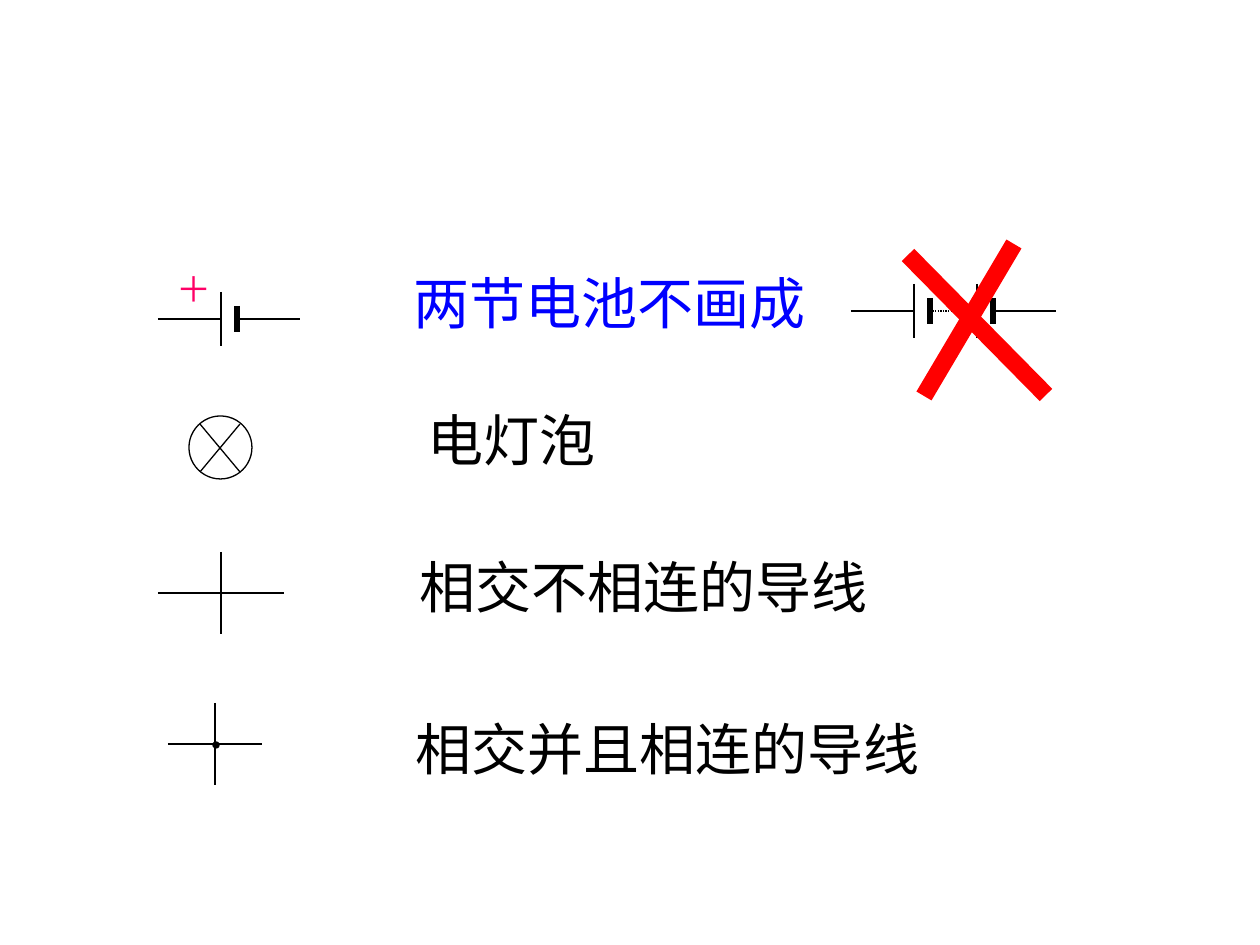
from dataclasses import dataclass

from pptx import Presentation
from pptx.dml.color import RGBColor
from pptx.enum.dml import MSO_LINE
from pptx.enum.shapes import MSO_CONNECTOR, MSO_SHAPE
from pptx.enum.text import MSO_AUTO_SIZE
from pptx.oxml.ns import qn
from pptx.oxml.xmlchemy import OxmlElement
from pptx.util import Emu, Pt

PX_PER_INCH = 126


@dataclass(frozen=True)
class Theme:
    font: str = "DejaVu Sans"
    ink: str = "000000"
    paper: str = "FFFFFF"
    note: str = "0000FF"
    plus: str = "FF0066"
    cross: str = "FF0000"
    label_size: int = 32
    plus_size: int = 20
    thin: float = 0.75
    plate: float = 3
    bold: float = 10


THEME = Theme()


def px(length):
    return Emu(round(length * 914400 / PX_PER_INCH))


def add_line(group, start, end, width=THEME.thin, color=THEME.ink, dash=None):
    line = group.shapes.add_connector(
        MSO_CONNECTOR.STRAIGHT, *map(px, (*start, *end)))
    line.line.color.rgb = RGBColor.from_string(color)
    line.line.width = Pt(width)
    if dash is not None:
        line.line.dash_style = dash
    line._element.spPr.append(OxmlElement("a:effectLst"))


def add_circle(group, left, top, size, fill):
    circle = group.shapes.add_shape(
        MSO_SHAPE.OVAL, px(left), px(top), px(size), px(size))
    circle.shadow.inherit = False
    circle.fill.solid()
    circle.fill.fore_color.rgb = RGBColor.from_string(fill)
    circle.line.color.rgb = RGBColor.from_string(THEME.ink)
    circle.line.width = Pt(THEME.thin)


def add_label(page, text, left, top, width, height=79,
              color=THEME.ink, size=THEME.label_size):
    box = page.shapes.add_textbox(px(left), px(top), px(width), px(height))
    box.text_frame.word_wrap = False
    box.text_frame.auto_size = MSO_AUTO_SIZE.SHAPE_TO_FIT_TEXT
    paragraph = box.text_frame.paragraphs[0]
    paragraph.text = text
    paragraph.font.name = THEME.font
    paragraph.font.size = Pt(size)
    paragraph.font.color.rgb = RGBColor.from_string(color)
    # The Chinese glyphs use the East Asian font slot
    east_asian = OxmlElement("a:ea")
    east_asian.set("typeface", THEME.font)
    paragraph._p.pPr.find(qn("a:defRPr")).find(qn("a:latin")).addnext(east_asian)


def add_battery(page, left, middle, cells):
    """Draw cells in a row, with dotted wire between them."""
    group = page.shapes.add_group_shape()
    lead, gap, pitch = 63, 16, 79
    plates = [left + lead + pitch * cell for cell in range(cells)]
    if cells == 2:
        plates[1] = plates[0] + lead
    end = plates[-1] + gap
    add_line(group, (left, middle), (plates[0], middle))
    add_line(group, (end, middle), (end + lead, middle))
    for plate in plates:
        add_line(group, (plate, middle - 27), (plate, middle + 27))
        add_line(group, (plate + gap, middle - 13), (plate + gap, middle + 13),
                 width=THEME.plate)
    for before, after in zip(plates, plates[1:]):
        add_line(group, (before + gap, middle), (after, middle),
                 dash=MSO_LINE.ROUND_DOT)


def add_lamp(page, left, top, size):
    group = page.shapes.add_group_shape()
    add_circle(group, left, top, size, THEME.paper)
    west, east, north, south = left + 11, left + 51, top + 8, top + 56
    add_line(group, (east, north), (west, south))
    add_line(group, (west, north), (east, south))


def add_crossing(page, center, middle, half_width, joined=False):
    group = page.shapes.add_group_shape()
    add_line(group, (center - half_width, middle), (center + half_width, middle))
    add_line(group, (center, middle - 41), (center, middle + 41))
    if joined:
        add_circle(group, center - 2, middle - 2, 6, THEME.ink)


def add_wrong_mark(page):
    group = page.shapes.add_group_shape()
    for start, end in (((1014, 244), (924, 396)), ((908, 255), (1046, 395))):
        add_line(group, start, end, width=THEME.bold, color=THEME.cross)


def main():
    deck = Presentation()
    deck.slide_width, deck.slide_height = px(1260), px(945)
    page = deck.slides.add_slide(deck.slide_layouts[6])

    # Circuit symbols
    add_battery(page, 158, 319, cells=1)
    add_battery(page, 851, 311, cells=2)
    add_lamp(page, 189, 416, 63)
    add_crossing(page, 221, 593, 63)
    add_crossing(page, 215, 744, 47, joined=True)

    # Labels and marks
    add_label(page, "两节电池不画成", 401, 262, 418, color=THEME.note)
    add_wrong_mark(page)
    add_label(page, "＋", 164, 261, 60, 54,
              color=THEME.plus, size=THEME.plus_size)
    add_label(page, "电灯泡", 415, 399, 194)
    add_label(page, "相交不相连的导线", 407, 546, 475)
    add_label(page, "相交并且相连的导线", 403, 708, 532)

    deck.save("out.pptx")


if __name__ == "__main__":
    main()
